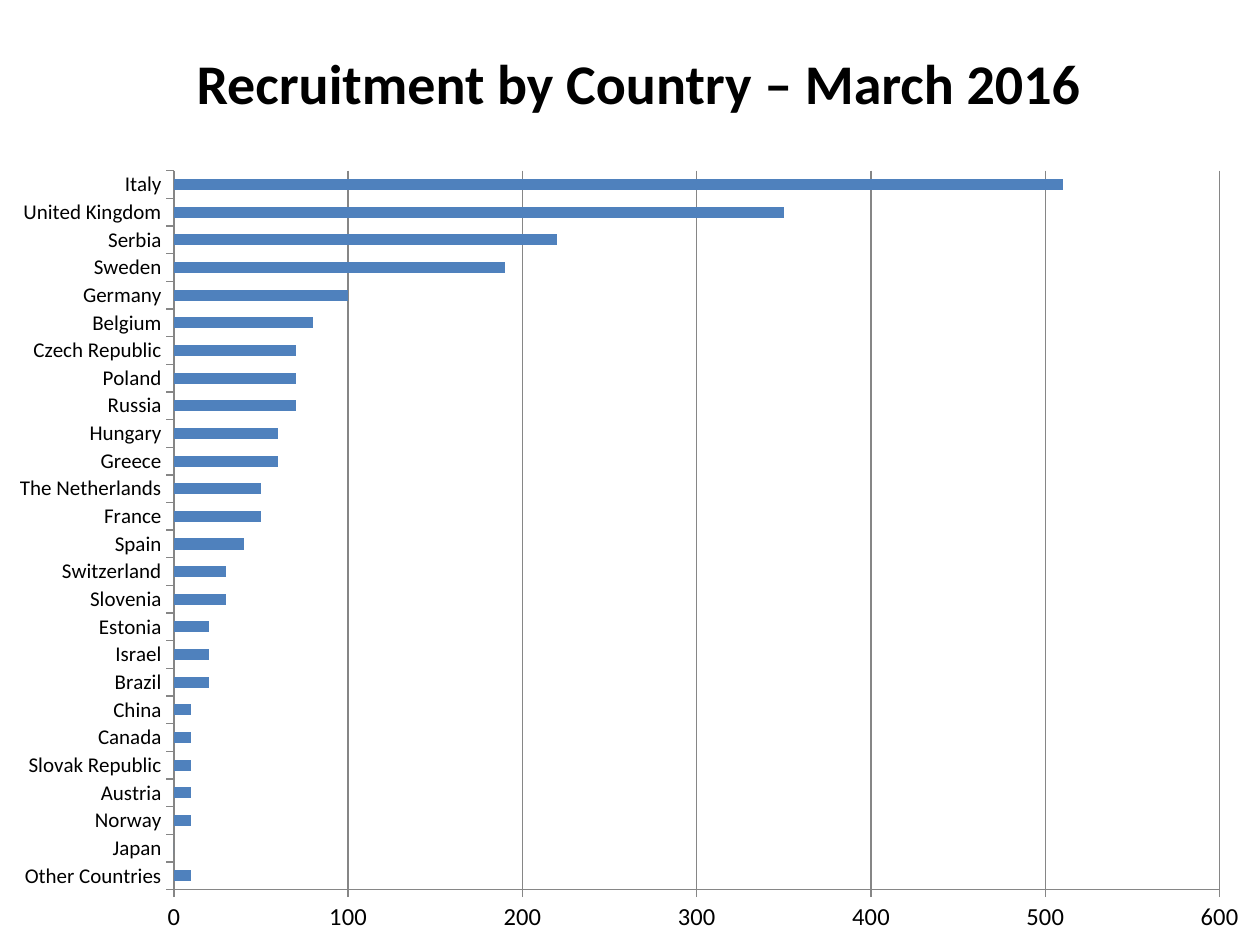
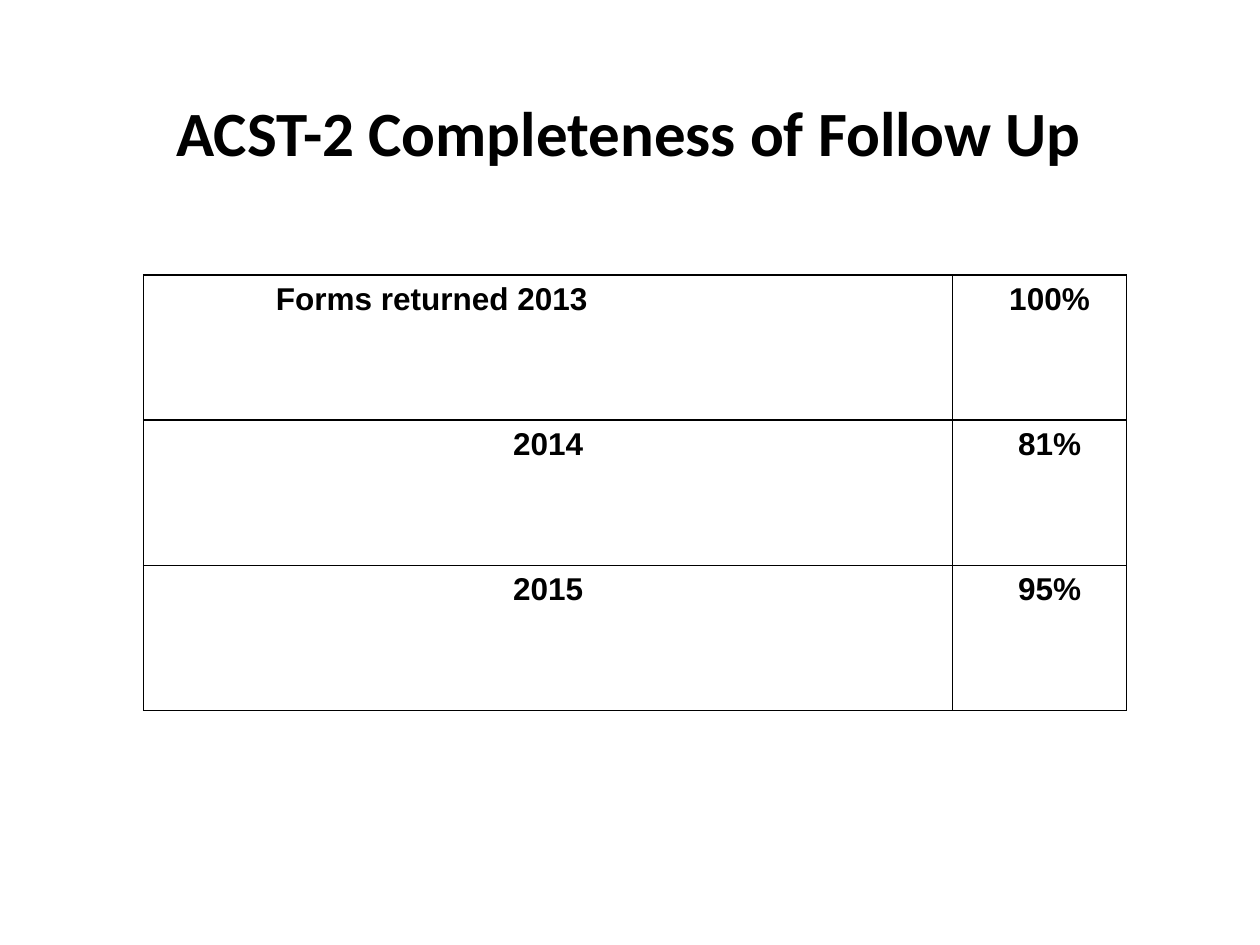
from lxml.etree import SubElement
from pptx import Presentation
from pptx.chart.data import CategoryChartData
from pptx.dml.color import RGBColor
from pptx.enum.chart import XL_CHART_TYPE, XL_TICK_MARK
from pptx.enum.text import MSO_ANCHOR, PP_ALIGN
from pptx.oxml.ns import qn
from pptx.util import Inches, Pt

SLIDE_WIDTH, SLIDE_HEIGHT = Inches(10), Inches(7.5)
COLORS = {"paper": "FFFFFF", "ink": "000000", "bar": "4F81BD", "grid": "868686"}
HEADING_FONT, TABLE_FONT = "Calibri", "Arial"
TITLE_ONLY = 5

RECRUITMENT = {
    "Other Countries": 10, "Japan": 0, "Norway": 10, "Austria": 10,
    "Slovak Republic": 10, "Canada": 10, "China": 10, "Brazil": 20,
    "Israel": 20, "Estonia": 20, "Slovenia": 30, "Switzerland": 30,
    "Spain": 40, "France": 50, "The Netherlands": 50, "Greece": 60,
    "Hungary": 60, "Russia": 70, "Poland": 70, "Czech Republic": 70,
    "Belgium": 80, "Germany": 100, "Sweden": 190, "Serbia": 220,
    "United Kingdom": 350, "Italy": 510,
}
FOLLOW_UP = [("Forms returned 2013", "100%"), ("2014", "81%"), ("2015", "95%")]


def rgb(name):
    """Return the named palette colour."""
    return RGBColor.from_string(COLORS[name])


def share_box(left, top, width, height):
    """Turn shares of the slide into a box of lengths."""
    return (int(left * SLIDE_WIDTH), int(top * SLIDE_HEIGHT),
            int(width * SLIDE_WIDTH), int(height * SLIDE_HEIGHT))


def style_font(font, face, size):
    """Apply face, size and ink colour to a font."""
    font.name, font.size = face, Pt(size)
    font.color.rgb = rgb("ink")


def add_bold_run(paragraph, wording, face, size):
    """Add one bold run to a paragraph."""
    run = paragraph.add_run()
    run.text = wording
    style_font(run.font, face, size)
    run.font.bold = True


def titled_slide(deck, heading, box, size):
    """Add a white slide with its heading in the title placeholder."""
    slide = deck.slides.add_slide(deck.slide_layouts[TITLE_ONLY])
    slide.background.fill.solid()
    slide.background.fill.fore_color.rgb = rgb("paper")
    title = slide.shapes.title
    title.left, title.top, title.width, title.height = box
    frame = title.text_frame
    frame.word_wrap = False
    frame.vertical_anchor = MSO_ANCHOR.MIDDLE
    paragraph = frame.paragraphs[0]
    paragraph.alignment = PP_ALIGN.LEFT
    add_bold_run(paragraph, heading, HEADING_FONT, size)
    return slide


def fix_plot_area(chart, **shares):
    """Pin the inner plot area to shares of the chart box."""
    plot_area = chart.plots[0]._element.getparent()
    layout = plot_area.find(qn("c:layout"))
    if layout is None:
        layout = SubElement(plot_area, qn("c:layout"))
        plot_area.insert(0, layout)
    manual = SubElement(layout, qn("c:manualLayout"))
    settings = {"layoutTarget": "inner", "xMode": "edge", "yMode": "edge", **shares}
    for tag, setting in settings.items():
        SubElement(manual, qn(f"c:{tag}")).set("val", str(setting))


def style_axis(axis, size):
    """Give an axis outside ticks, a grey line and label text."""
    axis.major_tick_mark = XL_TICK_MARK.OUTSIDE
    axis.minor_tick_mark = XL_TICK_MARK.NONE
    axis.format.line.color.rgb = rgb("grid")
    style_font(axis.tick_labels.font, HEADING_FONT, size)


def add_recruitment_chart(slide, box):
    """Draw the recruitment bars by country."""
    figures = CategoryChartData()
    figures.categories = list(RECRUITMENT)
    figures.add_series("Series 1", list(RECRUITMENT.values()))
    chart = slide.shapes.add_chart(XL_CHART_TYPE.BAR_CLUSTERED, *box, figures).chart
    chart.has_legend = chart.has_title = False
    style_font(chart.font, HEADING_FONT, 10)

    bars = chart.plots[0]
    bars.gap_width, bars.vary_by_categories = 150, False
    bars.series[0].format.fill.solid()
    bars.series[0].format.fill.fore_color.rgb = rgb("bar")

    style_axis(chart.category_axis, 12)
    counts = chart.value_axis
    style_axis(counts, 14)
    counts.minimum_scale, counts.maximum_scale, counts.major_unit = 0, 600, 100
    counts.has_major_gridlines = True
    counts.major_gridlines.format.line.color.rgb = rgb("grid")
    fix_plot_area(chart, x=0.14, y=0.02, w=0.83, h=0.91)


def border_cell(cell):
    """Rule all four sides of a cell that has no fill."""
    cell.fill.background()
    properties = cell._tc.get_or_add_tcPr()
    for position, side in enumerate("LRTB"):
        rule = SubElement(properties, qn(f"a:ln{side}"), w=str(Pt(1)))
        ink = SubElement(rule, qn("a:solidFill"))
        SubElement(ink, qn("a:srgbClr"), val=COLORS["ink"])
        properties.insert(position, rule)


def fill_cell(cell, wording, indent, alignment):
    """Write one bold entry into a ruled cell."""
    border_cell(cell)
    cell.margin_left = Inches(indent)
    cell.margin_top = cell.margin_right = Inches(0.01)
    cell.margin_bottom = 0
    paragraph = cell.text_frame.paragraphs[0]
    paragraph.alignment = alignment
    paragraph.line_spacing, paragraph.space_after = 1.15, Pt(10)
    add_bold_run(paragraph, wording, TABLE_FONT, 18)


def add_follow_up_table(slide, box):
    """Lay out the follow-up rates by year."""
    table = slide.shapes.add_table(len(FOLLOW_UP), 2, *box).table
    table.first_row = table.horz_banding = False
    year_width = int(box[2] * 0.823)
    table.columns[0].width = year_width
    table.columns[1].width = box[2] - year_width
    for row, (year, rate) in enumerate(FOLLOW_UP):
        indent, alignment = (1.05, PP_ALIGN.LEFT) if row == 0 else (0.01, PP_ALIGN.CENTER)
        fill_cell(table.cell(row, 0), year, indent, alignment)
        fill_cell(table.cell(row, 1), rate, 0.17, PP_ALIGN.CENTER)


def main():
    """Build and save both slides."""
    deck = Presentation()
    deck.slide_width, deck.slide_height = SLIDE_WIDTH, SLIDE_HEIGHT
    recruitment = titled_slide(deck, "Recruitment by Country – March 2016",
                               share_box(0.146, 0.044, 0.731, 0.085), 32)
    add_recruitment_chart(recruitment, share_box(-0.002, 0.164, 1, 0.836))
    follow_up = titled_slide(deck, "ACST-2 Completeness of Follow Up",
                             share_box(0.13, 0.091, 0.755, 0.095), 36)
    add_follow_up_table(follow_up, share_box(0.114, 0.291, 0.78, 0.461))
    deck.save("out.pptx")


if __name__ == "__main__":
    main()
